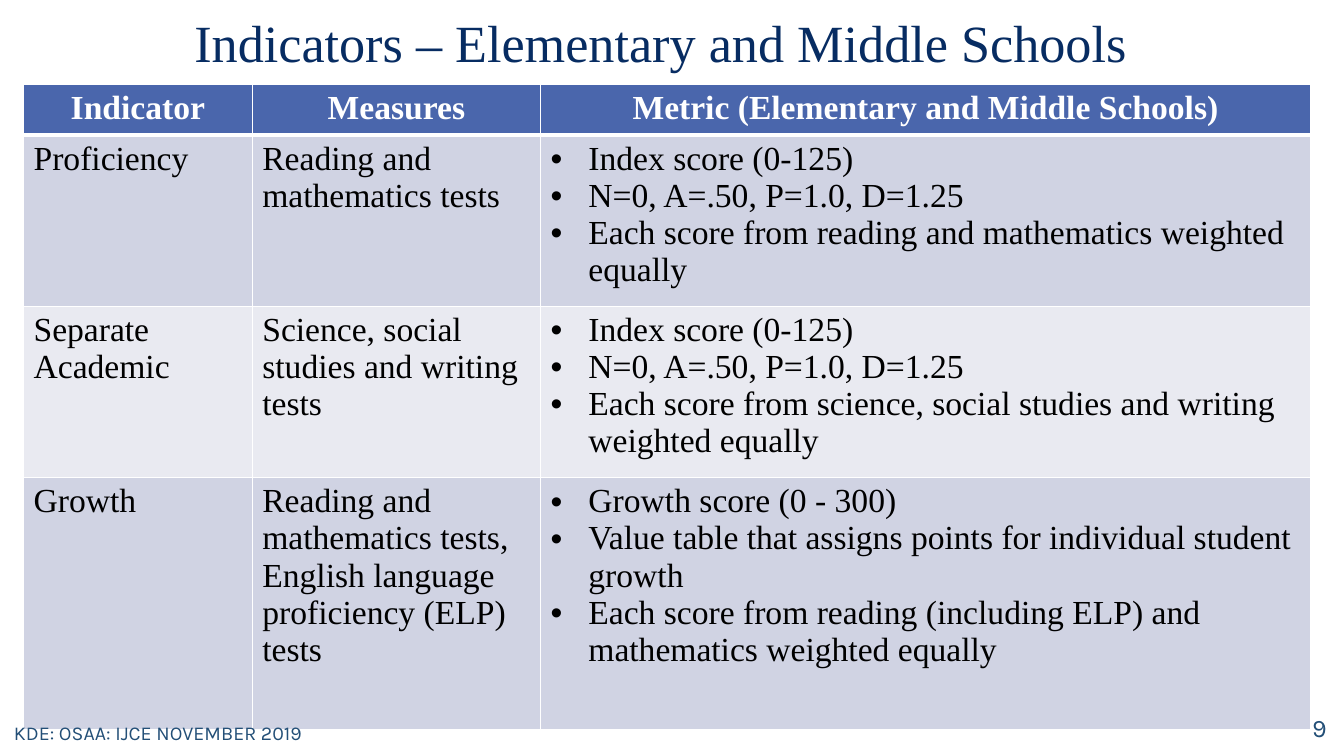
from lxml import etree
from pptx import Presentation
from pptx.dml.color import RGBColor
from pptx.enum.text import MSO_ANCHOR, PP_ALIGN
from pptx.oxml.ns import qn
from pptx.util import Pt

LEFT, CENTER, RIGHT = PP_ALIGN.LEFT, PP_ALIGN.CENTER, PP_ALIGN.RIGHT
TOP, MIDDLE = MSO_ANCHOR.TOP, MSO_ANCHOR.MIDDLE
SERIF, SANS = "Times New Roman", "Karla"
WHITE, BLACK, BLUE, NAVY = "FFFFFF", "000000", "234F77", "072C62"
HEADER, BANDS = "4A66AC", ("D0D3E3", "E9EAF1")


def rgb(value):
    return RGBColor.from_string(value)


def style(p, size, font, color, align, bold=False):
    p.alignment = align
    p.font.size = Pt(size)
    p.font.name = font
    p.font.bold = bold
    p.font.color.rgb = rgb(color)


prs = Presentation()
prs.slide_width, prs.slide_height = Pt(960), Pt(540)
s = prs.slides.add_slide(prs.slide_layouts[6])

rows = [
    ("Indicator", "Measures", ["Metric (Elementary and Middle Schools)"]),
    ("Proficiency", "Reading and mathematics tests", [
        "Index score (0-125)",
        "N=0, A=.50, P=1.0, D=1.25",
        "Each score from reading and mathematics weighted equally"]),
    ("Separate Academic", "Science, social studies and writing tests", [
        "Index score (0-125)",
        "N=0, A=.50, P=1.0, D=1.25",
        "Each score from science, social studies and writing weighted equally"]),
    ("Growth", "Reading and mathematics tests, English language proficiency (ELP) tests", [
        "Growth score (0 - 300)",
        "Value table that assigns points for individual student growth",
        "Each score from reading (including ELP) and mathematics weighted equally"]),
]
table = s.shapes.add_table(4, 3, Pt(16.8), Pt(60.5), Pt(919.4), Pt(460.8)).table
for column, width in zip(table.columns, (163.4, 205.9, 550.1)):
    column.width = Pt(width)
for row, height in zip(table.rows, (36, 122.4, 122.4, 180)):
    row.height = Pt(height)

for i, row in enumerate(rows):
    for j, content in enumerate(row):
        cell = table.cell(i, j)
        cell.fill.solid()
        cell.fill.fore_color.rgb = rgb(BANDS[(i - 1) % 2] if i else HEADER)
        cell.text = "\n".join(content) if j == 2 else content
        for p in cell.text_frame.paragraphs:
            style(p, 24, SERIF, BLACK if i else WHITE, LEFT if i else CENTER, i == 0)
            if i and j == 2:
                pPr = p._p.get_or_add_pPr()
                pPr.set("marL", str(Pt(27)))
                pPr.set("indent", str(-Pt(27)))
                bullet_font = etree.Element(qn("a:buFont"), typeface="Arial")
                bullet = etree.Element(qn("a:buChar"), char="•")
                pPr.insert(0, bullet_font)
                pPr.insert(1, bullet)
        tcPr = cell._tc.get_or_add_tcPr()
        for k, side in enumerate(("lnL", "lnR", "lnT", "lnB")):
            thick = (i, side) in ((0, "lnB"), (1, "lnT"))
            ln = etree.Element(qn("a:" + side), w=str(Pt(3 if thick else 1)))
            fill = etree.SubElement(ln, qn("a:solidFill"))
            etree.SubElement(fill, qn("a:srgbClr"), val=WHITE)
            tcPr.insert(k, ln)

labels = [
    ("9", 900.7, 505.4, 54, 28.8, 18, SANS, BLUE, RIGHT, TOP, 3.6),
    ("Indicators – Elementary and Middle Schools",
     0, 0, 943.9, 46.1, 37.3, SERIF, NAVY, CENTER, TOP, 7.2),
    ("KDE: OSAA: IJCE NOVEMBER 2019", 2.9, 509, 324, 28.8, 14, SANS, BLUE, LEFT, MIDDLE, 3.6),
]
for text, x, y, w, h, size, font, color, align, anchor, inset in labels:
    tf = s.shapes.add_textbox(Pt(x), Pt(y), Pt(w), Pt(h)).text_frame
    tf.word_wrap = True
    tf.vertical_anchor = anchor
    tf.margin_top = Pt(inset)
    tf.text = text
    style(tf.paragraphs[0], size, font, color, align)

prs.save("out.pptx")
